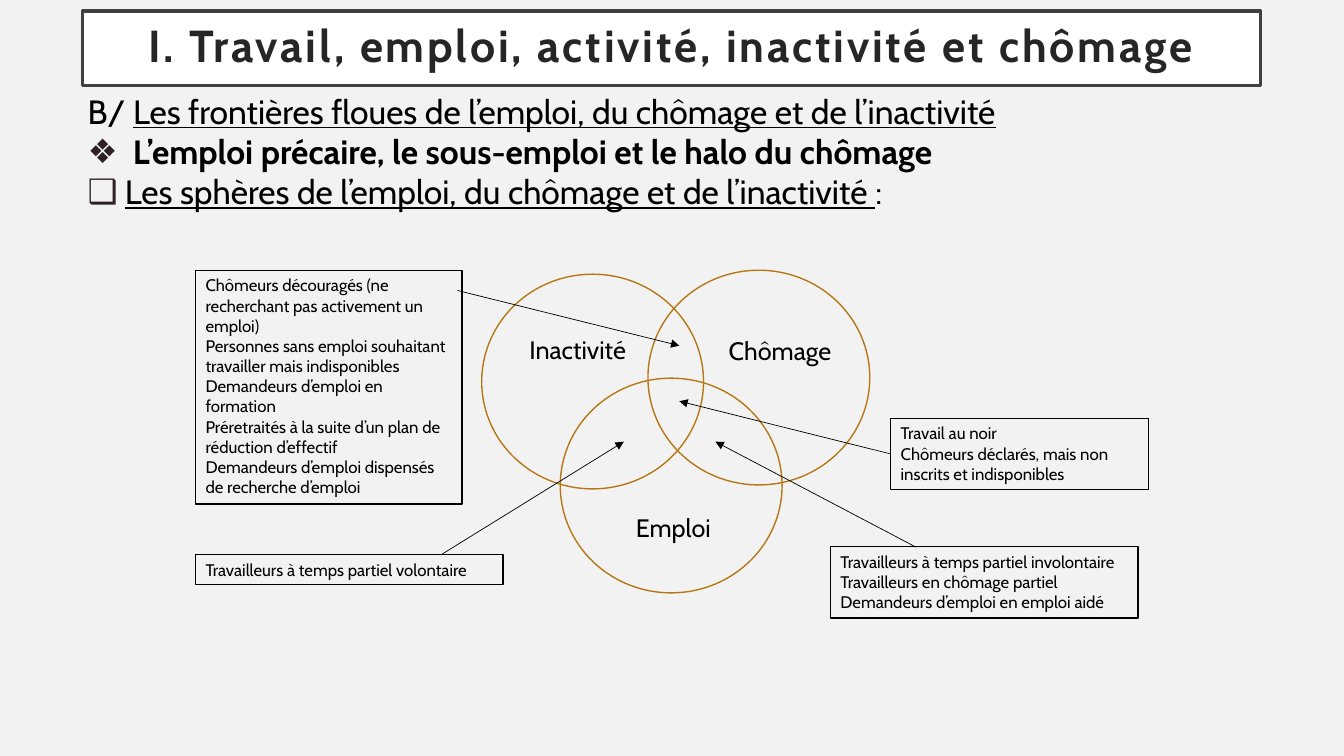
from lxml import etree
from pptx import Presentation
from pptx.dml.color import RGBColor
from pptx.enum.shapes import MSO_CONNECTOR, MSO_SHAPE
from pptx.enum.text import MSO_ANCHOR, PP_ALIGN
from pptx.oxml.ns import qn
from pptx.util import Cm, Pt

RECT, CIRCLE = MSO_SHAPE.RECTANGLE, MSO_SHAPE.FLOWCHART_CONNECTOR
STRAIGHT = MSO_CONNECTOR.STRAIGHT
TOP, MIDDLE = MSO_ANCHOR.TOP, MSO_ANCHOR.MIDDLE
LEFT, CENTER, JUSTIFY = PP_ALIGN.LEFT, PP_ALIGN.CENTER, PP_ALIGN.JUSTIFY
LEFT_SIDE = 1


def rgb(hex_color):
    return RGBColor.from_string(hex_color)


def sub(parent, tag, **attrs):
    """Append a DrawingML child element."""
    return etree.SubElement(parent, qn(tag), attrs)


def add_run(p, text, size=12, color="000000", bold=False, underline=False, spacing=0):
    r = p.add_run()
    r.text = text
    f = r.font
    f.name, f.size, f.bold, f.underline = Slide.FONT, Pt(size), bold, underline
    f.color.rgb = rgb(color)
    if spacing:
        r._r.get_or_add_rPr().set("spc", str(spacing * 100))


def set_bullet(p, char, indent):
    pPr = p._p.get_or_add_pPr()
    pPr.set("marL", str(Cm(indent)))
    pPr.set("indent", str(-Cm(indent)))
    sub(sub(pPr, "a:buClr"), "a:srgbClr", val="2D2123")
    sub(pPr, "a:buFont", typeface=Slide.FONT)
    sub(pPr, "a:buChar", char=char)


class Slide:
    FONT = "Cabin"
    INK = "000000"
    ACCENT = "B67815"

    def __init__(self, prs, background):
        self.s = prs.slides.add_slide(prs.slide_layouts[6])
        fill = self.s.background.fill
        fill.solid()
        fill.fore_color.rgb = rgb(background)

    def shape(self, kind, box, line, width=1, fill=None):
        sp = self.s.shapes.add_shape(kind, *map(Cm, box))
        sp.shadow.inherit = False
        if fill:
            sp.fill.solid()
            sp.fill.fore_color.rgb = rgb(fill)
        else:
            sp.fill.background()
        sp.line.color.rgb = rgb(line)
        sp.line.width = Pt(width)
        return sp

    def text(self, sp, lines, align=LEFT, anchor=TOP, **fmt):
        tf = sp.text_frame
        tf.word_wrap = True
        tf.vertical_anchor = anchor
        for i, line in enumerate(lines):
            p = tf.add_paragraph() if i else tf.paragraphs[0]
            p.alignment = align
            add_run(p, line, **fmt)
        return tf

    def title(self, text, box):
        sp = self.shape(RECT, box, "404040", 2.5, "FFFFFF")
        tf = self.text(sp, [text], CENTER, MIDDLE, size=32, color="262626",
                       bold=True, spacing=2)
        tf.margin_left = tf.margin_right = tf.margin_top = tf.margin_bottom = Cm(0.51)
        tf.paragraphs[0].line_spacing = 0.9

    def outline(self, items, box):
        """Add headings given as (bullet, indent, runs)."""
        tf = self.s.shapes.add_textbox(*map(Cm, box)).text_frame
        tf.word_wrap = True
        for i, (char, indent, runs) in enumerate(items):
            p = tf.add_paragraph() if i else tf.paragraphs[0]
            p.alignment = JUSTIFY
            if char:
                set_bullet(p, char, indent)
            for text, fmt in runs:
                add_run(p, text, size=24, **fmt)

    def circle(self, x, y):
        self.shape(CIRCLE, (x, y, 5.59, 5.41), self.ACCENT)

    def label(self, text, x, y):
        sp = self.s.shapes.add_textbox(Cm(x), Cm(y), Cm(3.4), Cm(1.02))
        self.text(sp, [text], CENTER, size=18)

    def note(self, lines, box):
        sp = self.shape(RECT, box, self.INK)
        self.text(sp, lines)
        return sp

    def arrow(self, start, end, source=None):
        c = self.s.shapes.add_connector(STRAIGHT, *map(Cm, start + end))
        if source is not None:
            c.begin_connect(source, LEFT_SIDE)
        c.line.color.rgb = rgb(self.INK)
        c.line.width = Pt(0.5)
        sub(c.line._get_or_add_ln(), "a:tailEnd", type="triangle")
        sub(c._element.spPr, "a:effectLst")


def main():
    prs = Presentation()
    prs.slide_width, prs.slide_height = Cm(33.87), Cm(19.05)
    slide = Slide(prs, "F2F2F2")

    slide.title("I. Travail, emploi, activité, inactivité et chômage",
                (2.08, 0.28, 29.69, 1.88))
    under = {"underline": True}
    slide.outline([
        (None, 0, [("B/ ", {}),
                   ("Les frontières floues de l’emploi, du chômage et de l’inactivité", under)]),
        ("❖", 1.14, [("L’emploi précaire, le sous-emploi et le halo du chômage", {"bold": True})]),
        ("❑", 0.94, [("Les sphères de l’emploi, du chômage et de l’inactivité ", under),
                     (":", {})]),
    ], (1.96, 2.16, 29.69, 14.76))

    for x, y in [(14.12, 9.53), (12.14, 6.91), (16.33, 6.81)]:
        slide.circle(x, y)
    for text, x, y in [("Inactivité ", 12.93, 8.31), ("Chômage ", 18.03, 8.33),
                       ("Emploi ", 15.34, 12.78)]:
        slide.label(text, x, y)

    slide.note(["Chômeurs découragés (ne recherchant pas activement un emploi)",
                "Personnes sans emploi souhaitant travailler mais indisponibles",
                "Demandeurs d’emploi en formation",
                "Préretraités à la suite d’un plan de réduction d’effectif",
                "Demandeurs d’emploi dispensés de recherche d’emploi"],
               (4.93, 6.81, 6.71, 5.89))
    slide.arrow((11.53, 7.32), (17.12, 8.71))

    slide.note(["Travailleurs à temps partiel involontaire",
                "Travailleurs en chômage partiel",
                "Demandeurs d’emploi en emploi aidé"],
               (20.93, 13.77, 7.75, 1.8))
    slide.arrow((23.09, 13.79), (18.03, 11.13))

    slide.note(["Travailleurs à temps partiel volontaire"], (4.93, 13.97, 7.75, 0.76))
    slide.arrow((11.13, 13.97), (15.72, 11.13))

    undeclared = slide.note(["Travail au noir",
                             "Chômeurs déclarés, mais non inscrits et indisponibles"],
                            (22.45, 10.54, 6.5, 1.8))
    slide.arrow((22.45, 11.44), (17.12, 10.11), undeclared)

    prs.save("out.pptx")


if __name__ == "__main__":
    main()
